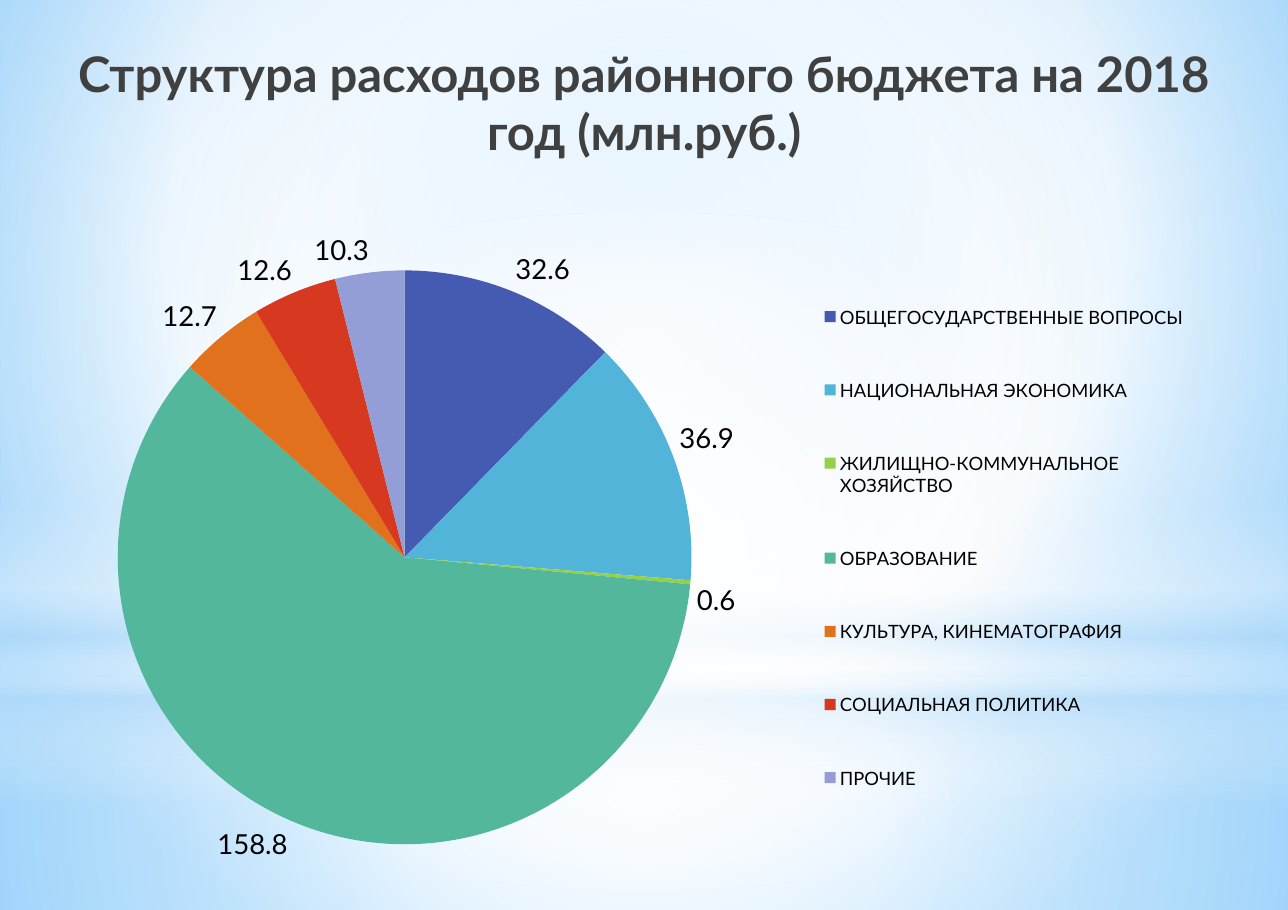
from pptx import Presentation
from pptx.chart.data import CategoryChartData
from pptx.dml.color import RGBColor
from pptx.enum.chart import XL_CHART_TYPE, XL_LABEL_POSITION, XL_LEGEND_POSITION
from pptx.enum.shapes import MSO_SHAPE
from pptx.enum.text import MSO_ANCHOR, PP_ALIGN
from pptx.oxml import parse_xml
from pptx.oxml.ns import nsdecls, qn
from pptx.util import Cm, Pt

WIDTH, HEIGHT = 29.7, 20.98
CENTRE = (50, 50, 50, 50)
EXPENSES = [
    ("ОБЩЕГОСУДАРСТВЕННЫЕ ВОПРОСЫ", 32.6, "455AB1"),
    ("НАЦИОНАЛЬНАЯ ЭКОНОМИКА", 36.9, "52B4D9"),
    ("ЖИЛИЩНО-КОММУНАЛЬНОЕ ХОЗЯЙСТВО", 0.6, "94D148"),
    ("ОБРАЗОВАНИЕ", 158.8, "52B79B"),
    ("КУЛЬТУРА, КИНЕМАТОГРАФИЯ", 12.7, "E2711D"),
    ("СОЦИАЛЬНАЯ ПОЛИТИКА", 12.6, "D63820"),
    ("ПРОЧИЕ", 10.3, "939ED6"),
]


def color(value):
    return RGBColor.from_string(value)


class BudgetSlide:
    """Hold the slide and its style, and add each kind of element."""

    font = "Lato"
    title_color = "404040"
    chart_color = "000000"

    def __init__(self, presentation):
        self.slide = presentation.slides.add_slide(presentation.slide_layouts[5])

    def gradient(self, owner, stops, focus=None):
        marks = "".join(
            f'<a:gs pos="{place * 1000}"><a:srgbClr val="{shade}">'
            f'<a:alpha val="{opacity * 1000}"/></a:srgbClr></a:gs>'
            for place, shade, opacity in stops
        )
        direction = '<a:lin ang="5400000" scaled="0"/>'
        if focus:
            sides = " ".join(f'{side}="{part * 1000}"' for side, part in zip("ltrb", focus))
            direction = f'<a:path path="circle"><a:fillToRect {sides}/></a:path>'
        solid = next(owner.iter(qn("a:solidFill")))
        solid.getparent().replace(solid, parse_xml(
            f'<a:gradFill {nsdecls("a")} rotWithShape="1">'
            f"<a:gsLst>{marks}</a:gsLst>{direction}</a:gradFill>"
        ))

    def background(self, stops, focus):
        self.slide.background.fill.solid()
        self.gradient(self.slide.element, stops, focus)

    def glow(self, preset, top, height, stops, focus=None):
        glow = self.slide.shapes.add_shape(preset, 0, Cm(top), Cm(WIDTH), Cm(height))
        glow.shadow.inherit = False
        glow.line.fill.background()
        glow.fill.solid()
        self.gradient(glow.element, stops, focus)

    def title(self, text, left, top, width, height):
        title = self.slide.shapes.title
        self.slide.shapes.element.append(title.element)
        title.left, title.top, title.width, title.height = map(Cm, (left, top, width, height))
        frame = title.text_frame
        frame.text = text
        frame.word_wrap = True
        frame.vertical_anchor = MSO_ANCHOR.MIDDLE
        frame.margin_left = frame.margin_right = Cm(0.28)
        frame.margin_top = frame.margin_bottom = Cm(0.15)
        paragraph = frame.paragraphs[0]
        paragraph.alignment = PP_ALIGN.CENTER
        run = paragraph.runs[0]
        self.style(run.font, 32, self.title_color)
        run.font.bold = True
        run.font.element.set("spc", "-15") if hasattr(run.font, "element") else None

    def style(self, font, size, shade):
        font.name = self.font
        font.size = Pt(size)
        font.color.rgb = color(shade)

    def arrange(self, part, index, *box):
        for old in part.findall(qn("c:layout")):
            part.remove(old)
        modes = "".join(f'<c:{axis}Mode val="edge"/>' for axis in "xy")
        sizes = "".join(f'<c:{name} val="{value}"/>' for name, value in zip("xywh", box))
        target = "" if index else '<c:layoutTarget val="inner"/>'
        part.insert(index, parse_xml(
            f'<c:layout {nsdecls("c")}><c:manualLayout>{target}{modes}{sizes}'
            "</c:manualLayout></c:layout>"
        ))

    def pie(self, entries, left, top, width, height):
        names, values, shades = zip(*entries)
        data = CategoryChartData(number_format="0.0")
        data.categories = names
        data.add_series("Series 1", values)
        chart = self.slide.shapes.add_chart(
            XL_CHART_TYPE.PIE, *map(Cm, (left, top, width, height)), data
        ).chart
        chart.has_title = False
        self.style(chart.font, 18, self.chart_color)
        plot = chart.plots[0]
        for index, shade in enumerate(shades):
            fill = plot.series[0].points[index].format.fill
            fill.solid()
            fill.fore_color.rgb = color(shade)
        plot.has_data_labels = True
        labels = plot.data_labels
        labels.show_value = True
        labels.show_percentage = False
        labels.position = XL_LABEL_POSITION.OUTSIDE_END
        self.style(labels.font, 18, self.chart_color)
        chart.has_legend = True
        legend = chart.legend
        legend.position = XL_LEGEND_POSITION.RIGHT
        legend.include_in_layout = False
        self.style(legend.font, 12, self.chart_color)
        space = chart.element
        self.arrange(next(space.iter(qn("c:plotArea"))), 0, 0.075, 0.08, 0.49, 0.857)
        self.arrange(next(space.iter(qn("c:legend"))), 1, 0.67, 0.056, 0.32, 0.875)


def main():
    presentation = Presentation()
    presentation.slide_width = Cm(WIDTH)
    presentation.slide_height = Cm(HEIGHT)
    budget = BudgetSlide(presentation)
    budget.background(
        [(0, "9ED5FF", 100), (60, "FFFFFF", 100), (100, "5BB9FF", 100)], (20, 10, 20, 60)
    )
    horizon = 15.62
    budget.glow(MSO_SHAPE.RECTANGLE, horizon, HEIGHT - horizon,
                [(0, "FFFFFF", 91), (37, "FFFFFF", 76), (100, "B4DCFA", 79)], CENTRE)
    budget.glow(MSO_SHAPE.RECTANGLE, 0, horizon,
                [(0, "FFFFFF", 89), (48, "FFFFFF", 62), (100, "B4DCFA", 79)], CENTRE)
    budget.glow(MSO_SHAPE.RECTANGLE, 11.53, 6.99,
                [(0, "FFFFFF", 0), (29, "FFFFFF", 30), (45, "B4DCFA", 40),
                 (55, "FFFFFF", 26), (65, "B4DCFA", 60), (100, "FFFFFF", 0)])
    budget.glow(MSO_SHAPE.OVAL, 4.9, horizon, [(0, "FFFFFF", 100), (56, "FFFFFF", 0)], CENTRE)
    budget.title("Структура расходов районного бюджета на 2018 год (млн.руб.)",
                 0.89, 0.76, 27.94, 3.18)
    budget.pie(EXPENSES, 0.66, 5, 27.1, 15.44)
    presentation.save("out.pptx")


if __name__ == "__main__":
    main()
